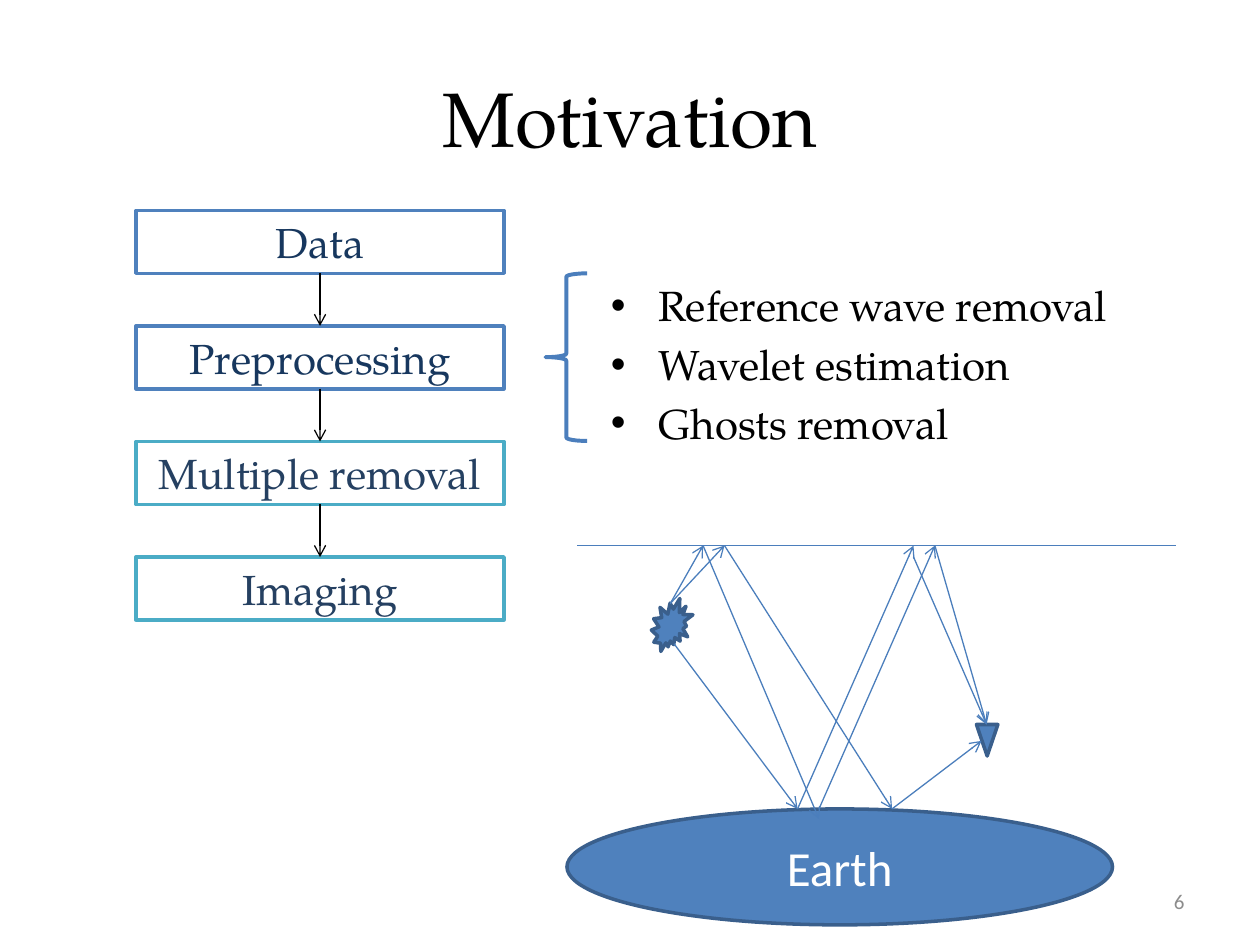
from pptx import Presentation
from pptx.dml.color import RGBColor
from pptx.enum import shapes, text
from pptx.oxml.ns import qn
from pptx.util import Inches, Pt
from lxml import etree

COLORS = {
    "black": "000000", "white": "FFFFFF", "grey": "8C8C8C",
    "blue": "4F81BD", "ray": "4B7EBC", "edge": "3A5F8C", "aqua": "4BACC6",
    "navy": "17375E", "slate": "254061",
}
SERIF, SANS = "TeX Gyre Pagella", "Calibri"
KIND, ALIGN, ANCHOR = shapes.MSO_SHAPE, text.PP_ALIGN, text.MSO_ANCHOR

TITLE = "Motivation"
STEPS = [
    ("Data", "blue", "navy"),
    ("Preprocessing", "blue", "navy"),
    ("Multiple removal", "aqua", "slate"),
    ("Imaging", "aqua", "slate"),
]
STEP_LEFT, STEP_TOP, STEP_WIDTH, STEP_HEIGHT, STEP_PITCH = 1.08, 1.67, 2.92, 0.5, 0.917
PREPROCESSING_TASKS = ["Reference wave removal", "Wavelet estimation", "Ghosts removal"]
SURFACE_Y, EARTH_Y = 4.33, 6.42
SURFACE = [(4.58, SURFACE_Y), (9.33, SURFACE_Y)]
SOURCE_TOP, RECEIVER_TOP = (5.32, 4.79), (7.83, 5.75)
RAY_PATHS = [
    [(5.35, 5.11), (6.33, EARTH_Y), (7.25, SURFACE_Y)],
    [(7.25, 4.42), RECEIVER_TOP],
    [SOURCE_TOP, (5.75, SURFACE_Y), (7.08, EARTH_Y), (7.79, 5.88)],
    [SOURCE_TOP, (5.58, SURFACE_Y), (6.5, 6.5)],
    [(6.5, EARTH_Y), (7.42, SURFACE_Y), RECEIVER_TOP],
]
PAGE_NUMBER = "6"

prs = Presentation()
prs.slide_width, prs.slide_height = Inches(10), Inches(7.5)
slide = prs.slides.add_slide(prs.slide_layouts[6])


def rgb(name):
    return RGBColor.from_string(COLORS[name])


def write(holder, lines, size, font, color, align, anchor=ANCHOR.MIDDLE):
    frame = holder.text_frame
    frame.text = "\n".join(lines)
    frame.word_wrap = True
    frame.vertical_anchor = anchor
    for paragraph in frame.paragraphs:
        paragraph.alignment = align
        for run in paragraph.runs:
            run.font.size, run.font.name = Pt(size), font
            run.font.color.rgb = rgb(color)
    return frame


def add_text(box, *style):
    return write(slide.shapes.add_textbox(*map(Inches, box)), *style)


def add_shape(kind, box, fill, line, width=2):
    shape = slide.shapes.add_shape(kind, *map(Inches, box))
    shape.shadow.inherit = False
    if fill:
        shape.fill.solid()
        shape.fill.fore_color.rgb = rgb(fill)
    else:
        shape.fill.background()
    shape.line.color.rgb = rgb(line)
    shape.line.width = Pt(width)
    return shape


def add_line(start, end, color, arrow=True):
    line = slide.shapes.add_connector(
        shapes.MSO_CONNECTOR.STRAIGHT, *map(Inches, (*start, *end)))
    line.line.color.rgb = rgb(color)
    line.line.width = Pt(0.75)
    if arrow:
        etree.SubElement(line.line._get_or_add_ln(), qn("a:tailEnd"), type="arrow")
    etree.SubElement(line._element.spPr, qn("a:effectLst"))
    return line


def add_bullet(paragraph):
    props = paragraph._p.get_or_add_pPr()
    props.set("marL", str(Inches(0.38)))
    props.set("indent", str(-Inches(0.38)))
    etree.SubElement(props, qn("a:buFont"), typeface="Arial")
    etree.SubElement(props, qn("a:buChar"), char="•")


add_text((0.5, 0.3, 9, 1.25), [TITLE], 44, SERIF, "black", ALIGN.CENTER)

tasks = add_text((4.75, 2.17, 4.5, 1.6), PREPROCESSING_TASKS, 24, SERIF, "black",
                 ALIGN.LEFT, ANCHOR.TOP)
for index, task in enumerate(tasks.paragraphs):
    add_bullet(task)
    if index:
        task.space_before = Pt(4.8)

step_boxes = []
for index, (label, border, color) in enumerate(STEPS):
    top = STEP_TOP + index * STEP_PITCH
    step = add_shape(KIND.RECTANGLE, (STEP_LEFT, top, STEP_WIDTH, STEP_HEIGHT), "white", border)
    write(step, [label], 24, SERIF, color, ALIGN.CENTER, ANCHOR.TOP)
    step_boxes.append(step)
for upper, lower in zip(step_boxes, step_boxes[1:]):
    flow = add_line((0, 0), (1, 1), "black")
    flow.begin_connect(upper, 2)
    flow.end_connect(lower, 0)

add_shape(KIND.LEFT_BRACE, (4.33, 2.17, 0.33, 1.33), None, "ray", 2.25)
add_shape(KIND.EXPLOSION2, (5.17, 4.75, 0.33, 0.42), "blue", "edge")
add_shape(KIND.FLOWCHART_MERGE, (7.75, 5.75, 0.17, 0.25), "blue", "edge")
add_line(*SURFACE, "ray", arrow=False)
earth = add_shape(KIND.OVAL, (4.5, EARTH_Y, 4.33, 0.92), "blue", "edge")
write(earth, ["Earth"], 28, SANS, "white", ALIGN.CENTER)
for ray in RAY_PATHS:
    for start, end in zip(ray, ray[1:]):
        add_line(start, end, "ray")

add_text((7.17, 6.95, 2.33, 0.4), [PAGE_NUMBER], 12, SANS, "grey", ALIGN.RIGHT)

prs.save("out.pptx")
